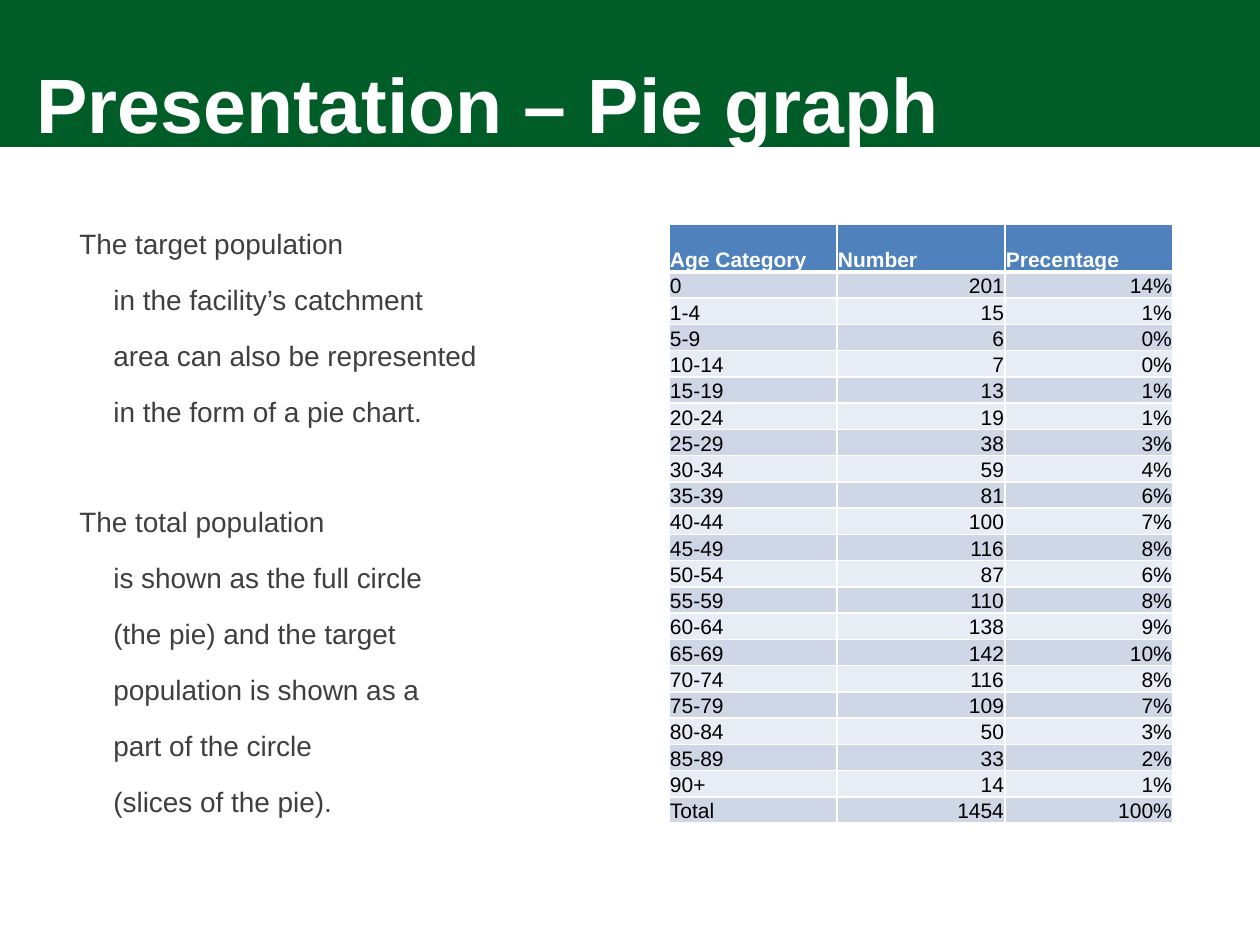
from lxml import etree
from pptx import Presentation
from pptx import util as u
from pptx.dml.color import RGBColor
from pptx.enum import shapes, text
from pptx.oxml.ns import qn

PX_PER_INCH = 126
FONT = "Arial"
COLORS = {
    "banner": "005D28",
    "white": "FFFFFF",
    "body": "3F3F3F",
    "header": "4F81BD",
    "band_dark": "CFD7E7",
    "band_light": "E8ECF4",
    "cell": "000000",
}

HEADERS = ["Age Category", "Number", "Precentage"]
ROWS = [
    ("0", 201, 14), ("1-4", 15, 1), ("5-9", 6, 0), ("10-14", 7, 0),
    ("15-19", 13, 1), ("20-24", 19, 1), ("25-29", 38, 3), ("30-34", 59, 4),
    ("35-39", 81, 6), ("40-44", 100, 7), ("45-49", 116, 8), ("50-54", 87, 6),
    ("55-59", 110, 8), ("60-64", 138, 9), ("65-69", 142, 10), ("70-74", 116, 8),
    ("75-79", 109, 7), ("80-84", 50, 3), ("85-89", 33, 2), ("90+", 14, 1),
    ("Total", 1454, 100),
]
STATEMENTS = [
    ["The target population", "in the facility’s catchment",
     "area can also be represented", "in the form of a pie chart."],
    ["The total population", "is shown as the full circle",
     "(the pie) and the target", "population is shown as a",
     "part of the circle", "(slices of the pie)."],
]
LINE_GAP = 14.7
STATEMENT_GAP = 46


def px(n):
    return round(n * u.Inches(1) / PX_PER_INCH)


def rgb(name):
    return RGBColor.from_string(COLORS[name])


def add_run(p, words, size, color, bold=False):
    r = p.add_run()
    r.text = words
    r.font.name = FONT
    r.font.size = u.Pt(size)
    r.font.bold = bold
    r.font.color.rgb = rgb(color)


def add_text_frame(slide, x, y, w, h, anchor):
    tf = slide.shapes.add_textbox(px(x), px(y), px(w), px(h)).text_frame
    tf.word_wrap = True
    tf.vertical_anchor = anchor
    return tf


def add_banner(slide):
    sp = slide.shapes.add_shape(shapes.MSO_SHAPE.RECTANGLE, 0, 0, px(1260), px(147))
    sp.shadow.inherit = False
    sp.fill.solid()
    sp.fill.fore_color.rgb = rgb("banner")
    sp.line.fill.background()


def add_title(slide, words):
    tf = add_text_frame(slide, 24, 58, 1075, 97, text.MSO_ANCHOR.BOTTOM)
    p = tf.paragraphs[0]
    p.line_spacing = 0.85
    add_run(p, words, 44, "white", bold=True)


def add_statements(slide):
    """Each statement opens at the margin and continues in indented lines."""
    tf = add_text_frame(slide, 54, 224, 557, 624, text.MSO_ANCHOR.TOP)
    p = tf.paragraphs[0]
    for s, lines in enumerate(STATEMENTS):
        for i, line in enumerate(lines):
            if s or i:
                p = tf.add_paragraph()
                p.space_before = u.Pt(LINE_GAP if i else STATEMENT_GAP)
            p.line_spacing = 0.9
            p._p.get_or_add_pPr().set("marL", str(px(47 if i else 13)))
            add_run(p, line, 16, "body")


def set_borders(cell, top, bottom):
    tc_pr = cell._tc.get_or_add_tcPr()
    sides = [("a:lnL", 1), ("a:lnR", 1), ("a:lnT", top), ("a:lnB", bottom)]
    for i, (tag, width) in enumerate(sides):
        ln = etree.Element(qn(tag), w=str(u.Pt(width)))
        fill = etree.SubElement(ln, qn("a:solidFill"))
        etree.SubElement(fill, qn("a:srgbClr"), val=COLORS["white"])
        tc_pr.insert(i, ln)


def fill_cell(cell, words, fill, color, bold, align):
    cell.margin_left = cell.margin_right = cell.margin_top = px(1)
    cell.margin_bottom = 0
    cell.vertical_anchor = text.MSO_ANCHOR.BOTTOM
    cell.fill.solid()
    cell.fill.fore_color.rgb = rgb(fill)
    p = cell.text_frame.paragraphs[0]
    p.alignment = align
    add_run(p, words, 12, color, bold)


def add_age_table(slide):
    col_w, head_h, row_h = 168, 48, 26
    data = [HEADERS] + [(age, str(n), f"{pct}%") for age, n, pct in ROWS]
    table = slide.shapes.add_table(
        len(data), len(HEADERS), px(669), px(224),
        px(col_w * len(HEADERS)), px(head_h + row_h * len(ROWS))).table
    table.horz_banding = False
    for col in table.columns:
        col.width = px(col_w)
    for i, values in enumerate(data):
        head = i == 0
        table.rows[i].height = px(head_h if head else row_h)
        fill = "header" if head else "band_dark" if i % 2 else "band_light"
        for j, words in enumerate(values):
            right = j > 0 and not head
            cell = table.cell(i, j)
            fill_cell(cell, words, fill, "white" if head else "cell", head,
                      text.PP_ALIGN.RIGHT if right else text.PP_ALIGN.LEFT)
            set_borders(cell, top=3 if i == 1 else 1, bottom=3 if head else 1)


def main():
    prs = Presentation()
    prs.slide_width, prs.slide_height = px(1260), px(945)
    slide = prs.slides.add_slide(prs.slide_layouts[6])
    add_banner(slide)
    add_title(slide, "Presentation – Pie graph")
    add_age_table(slide)
    add_statements(slide)
    prs.save("out.pptx")


if __name__ == "__main__":
    main()
